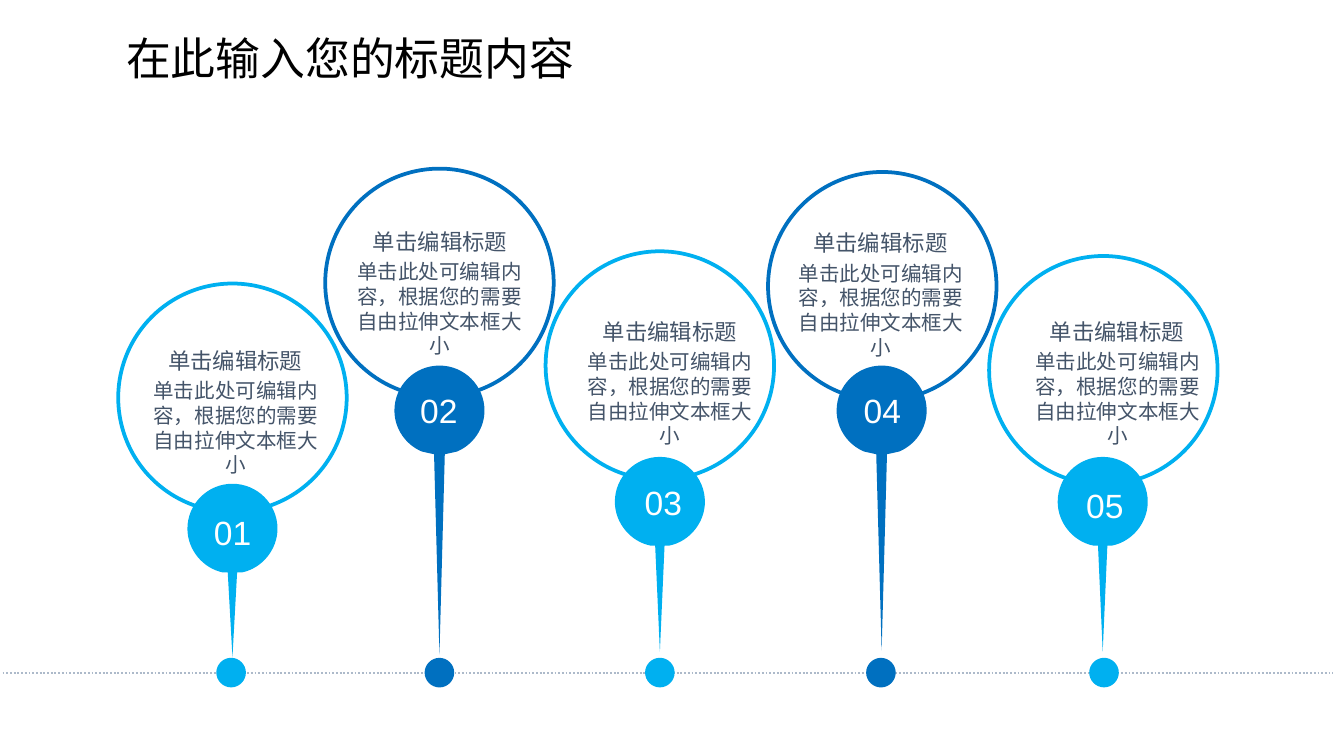
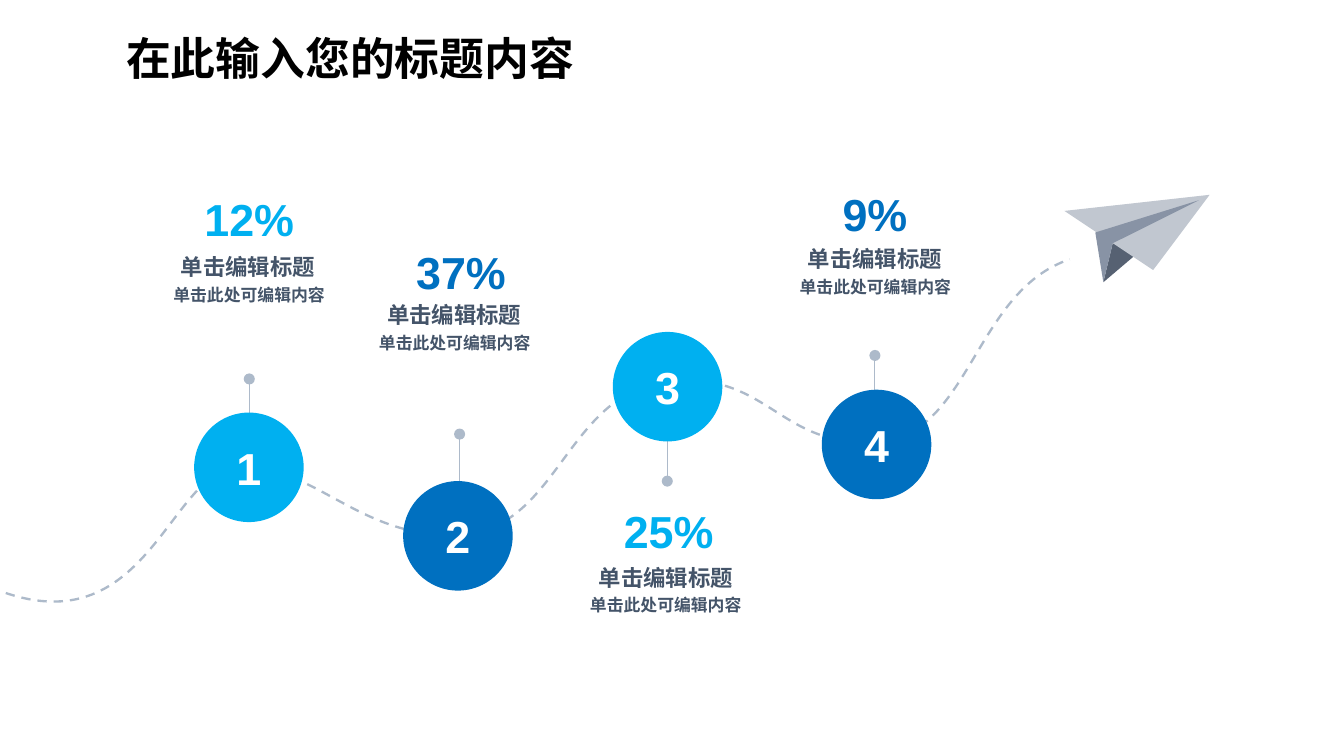
from collections import namedtuple

from lxml import etree
from pptx import Presentation
from pptx import util as u
from pptx.dml import color
from pptx.enum import dml, shapes, text
from pptx.oxml import ns

COLORS = {
    "light": "00B0F0", "dark": "0070C0", "guide": "ADBACA",
    "body": "445469", "title": "000000", "white": "FFFFFF",
    "wing": "C1C7D0", "fold": "8893A5", "shade": "566172",
}
FONT = "Arial"
WIDTH, HEIGHT = u.Inches(10), u.Inches(5.625)
COLUMNS = 100  # square grid: rows are as high as columns are wide
TITLE = "在此输入您的标题内容"
LABEL = "单击编辑标题"
CENTER, LEFT = text.PP_ALIGN.CENTER, text.PP_ALIGN.LEFT

# Pin: ring corner and tip on the grid; the other pairs are offsets from the ring corner
Pin = namedtuple("Pin", "no color ring head tip dot_x label body number")
PINS = [
    Pin("01", "light", (8.8, 21.1), (8.5, 14.9), 48.9, 8.4,
        (-0.9, 4.75), (2, 7.05), (4.55, 17)),
    Pin("03", "light", (40.6, 18.7), (8.5, 15.3), 48.5, 8.5,
        (-0.35, 5), (2.5, 7.3), (4.8, 17.15)),
    Pin("05", "light", (73.6, 19.05), (8.45, 14.95), 48.5, 8.55,
        (-0.1, 4.65), (2.8, 6.95), (4.65, 17.05)),
    Pin("04", "dark", (57.15, 12.8), (8.45, 14.4), 48.4, 8.4,
        (-1.25, 4.25), (1.65, 6.6), (4.55, 16.2)),
    Pin("02", "dark", (24.2, 12.55), (8.5, 14.65), 48.7, 8.5,
        (-1.05, 4.45), (1.75, 6.75), (4.5, 16.45)),
]
RING, HEAD_R, DOT_R, AXIS_Y = 17, 3.35, 1.1, 50.05
# Right side of a pin head below its widest point, down to the needle
SHOULDERS = {
    "light": [((3.35, 4.9), (2.2, 6.3), (0.7, 6.6)), ((0.35, 6.6),)],
    "dark": [((3.35, 4.7), (2.5, 5.9), (1.3, 6.4)), ((0.4, 6.6),)],
}

# Step: circle corner, pole start and signed length, corners of the three labels
Step = namedtuple("Step", "no color circle pole length share share_at label_at note_at")
STEPS = [
    Step("2", "dark", (30, 35.8), (34.2, 39.3), -7, "37%",
         (27.85, 18.2), (28.15, 22.4), (28.2, 24.75)),
    Step("3", "light", (45.6, 24.7), (49.65, 28.8), 7, "25%",
         (43.3, 37.5), (43.9, 41.95), (43.9, 44.25)),
    Step("4", "dark", (61.15, 29), (65.1, 33.5), -7.05, "9%",
         (58.65, 13.9), (59.45, 18.25), (59.5, 20.6)),
    Step("1", "light", (14.45, 30.7), (18.55, 35.2), -7, "12%",
         (12.1, 14.3), (12.8, 18.85), (12.9, 21.2)),
]
DISC = 8.15
# First point, then curves of two handles and an end point
ROUTE = [
    ((-0.7, 43.7),),
    ((11.2, 48.7), (12.5, 34.5), (18.1, 34.7)),
    ((23.6, 34.8), (27, 40.2), (34.3, 39.8)),
    ((41.6, 39.3), (42.1, 29.3), (49.6, 28.4)),
    ((57.1, 27.5), (57.9, 33.3), (65.1, 32.9)),
    ((72.2, 32.6), (72.4, 21.7), (79.6, 19.3)),
]
PLANE_BOX = (79.2, 14.5)
PLANE = [  # corners relative to the plane's box
    ("shade", [(6.2, 3.7), (2.9, 6.5), (3.6, 3.6)]),
    ("wing", [(10.8, 0), (0, 1.2), (6.6, 5.6)]),
    ("fold", [(10, 0.4), (2.3, 2.8), (2.9, 6.5), (3.6, 3.6)]),
]


def cells(*values):
    return [round(WIDTH * v / COLUMNS) for v in values]


def shift(box, offset):
    return box[0] + offset[0], box[1] + offset[1]


def move(box, segments):
    return [tuple(shift(box, point) for point in seg) for seg in segments]


def rgb(name):
    return color.RGBColor.from_string(COLORS[name])


def paint(sp, fill=None, line=None, width=1):
    sp.shadow.inherit = False
    if fill:
        sp.fill.solid()
        sp.fill.fore_color.rgb = rgb(fill)
    else:
        sp.fill.background()
    if line:
        sp.line.color.rgb = rgb(line)
        sp.line.width = u.Pt(width)
    else:
        sp.line.fill.background()
    return sp


def write(sp, words, size, ink, align=CENTER, bold=False, inset=(0, 0), middle=False):
    tf = sp.text_frame
    tf.text = words
    tf.word_wrap = True
    tf.margin_left = tf.margin_right = u.Inches(inset[0])
    tf.margin_top = tf.margin_bottom = u.Inches(inset[1])
    tf.vertical_anchor = text.MSO_ANCHOR.MIDDLE if middle else text.MSO_ANCHOR.TOP
    p = tf.paragraphs[0]
    p.alignment = align
    font = p.runs[0].font
    font.name, font.size, font.bold = FONT, u.Pt(size), bold
    font.color.rgb = rgb(ink)


def add_label(parent, at, size, words, points, ink, **style):
    sp = parent.shapes.add_textbox(*cells(*at, *size))
    write(sp, words, points, ink, **style)
    sp.text_frame.auto_size = text.MSO_AUTO_SIZE.SHAPE_TO_FIT_TEXT


def add_circle(parent, at, size, **style):
    sp = parent.shapes.add_shape(shapes.MSO_SHAPE.OVAL, *cells(*at, size, size))
    return paint(sp, **style)


def add_outline(parent, contours, close=True):
    """Draw contours of segments: one point is a corner, three points are a cubic curve."""
    builder = None
    for (start,), *segments in contours:
        if builder is None:
            builder = parent.shapes.build_freeform(*cells(*start))
        else:
            builder.move_to(*cells(*start))
        points = [cells(*point) for seg in segments for point in seg]
        builder.add_line_segments(points, close=close)
    sp = builder.convert_to_shape()
    lines = iter(list(sp._element.iter(ns.qn("a:lnTo"))))
    for _, *segments in contours:
        for seg in segments:
            first, *others = [next(lines) for _ in seg]
            if others:
                first.tag = ns.qn("a:cubicBezTo")
            for line in others:
                first.append(line[0])
                line.getparent().remove(line)
    return sp


def add_line(s, start, end, width):
    c = s.shapes.add_connector(shapes.MSO_CONNECTOR.STRAIGHT, *cells(*start, *end))
    c.line.color.rgb = rgb("guide")
    c.line.width = u.Pt(width)
    etree.SubElement(c._element.spPr, ns.qn("a:effectLst"))
    return c


def mirror(segments):
    """Retrace the segments backwards on the other side of the vertical axis."""
    points = [(-x, y) for seg in segments for x, y in seg][::-1]
    result, at = [], 1
    for seg in segments[:0:-1]:
        result.append(tuple(points[at:at + len(seg)]))
        at += len(seg)
    return result


def dot_contour(center):
    k, r = 0.6, DOT_R
    half = [((0, -r),), ((k, -r), (r, -k), (r, 0)), ((r, k), (k, r), (0, r))]
    return move(center, half + mirror(half))


def head_contour(top, kind, tip_y):
    quarter = ((1.85, 0), (HEAD_R, 1.5), (HEAD_R, HEAD_R))
    half = [((0, 0),), quarter, *SHOULDERS[kind], ((0, tip_y - top[1]),)]
    return move(top, half + mirror(half))


def add_title(s, bold):
    add_label(s, (8.4, 1.8), (40.9, 5), TITLE, 24, "title",
              align=LEFT, bold=bold, inset=(0.1, 0.05))


def add_pin(s, pin):
    group = s.shapes.add_group_shape()
    add_circle(group, pin.ring, RING, line=pin.color, width=2)
    dot = dot_contour((pin.ring[0] + pin.dot_x, AXIS_Y))
    head = head_contour(shift(pin.ring, pin.head), pin.color, pin.tip)
    paint(add_outline(group, [dot, head]), fill=pin.color)
    add_label(group, shift(pin.ring, pin.label), (19.2, 2), LABEL, 12, "body")
    add_label(group, shift(pin.ring, pin.body), (13.5, 7.4),
              "单击此处可编辑内容，根据您的需要自由拉伸文本框大小", 11, "body")
    add_label(group, shift(pin.ring, pin.number), (7.9, 3), pin.no, 18, "white")


def add_pole(s, step):
    x, y = step.pole
    c = add_line(s, step.pole, (x, y + step.length), 0.5)
    ln = c._element.spPr.find(ns.qn("a:ln"))
    etree.SubElement(ln, ns.qn("a:tailEnd"), type="oval")


def add_disc(s, step):
    sp = add_circle(s, step.circle, DISC, fill=step.color)
    write(sp, step.no, 24, "white", bold=True, inset=(0.07, 0.04), middle=True)


def add_step_label(s, step):
    group = s.shapes.add_group_shape()
    add_label(group, step.share_at, (12.9, 4), step.share, 24, step.color,
              bold=True, middle=True)
    add_label(group, step.label_at, (11.3, 2), LABEL, 12, "body", bold=True)
    add_label(group, step.note_at, (11.3, 1.5), "单击此处可编辑内容", 9, "body",
              align=LEFT, bold=True)


def add_plane(s, box):
    group = s.shapes.add_group_shape()
    for fill, corners in PLANE:
        contour = move(box, [(corner,) for corner in corners])
        paint(add_outline(group, [contour]), fill=fill)


def build_pin_slide(s):
    add_title(s, bold=False)
    axis = add_line(s, (0.2, 50.1), (99.2, 50.1), 1)
    axis.line.dash_style = dml.MSO_LINE.ROUND_DOT
    for pin in PINS:
        add_pin(s, pin)


def build_route_slide(s):
    add_title(s, bold=True)
    for step in STEPS:
        add_pole(s, step)
    route = add_outline(s, [ROUTE], close=False)
    paint(route, line="guide", width=1.25)
    route.line.dash_style = dml.MSO_LINE.DASH
    for step in STEPS:
        add_disc(s, step)
    add_plane(s, PLANE_BOX)
    for step in STEPS:
        add_step_label(s, step)


def main():
    prs = Presentation()
    prs.slide_width, prs.slide_height = WIDTH, HEIGHT
    for build in (build_pin_slide, build_route_slide):
        build(prs.slides.add_slide(prs.slide_layouts[6]))
    prs.save("out.pptx")


if __name__ == "__main__":
    main()
